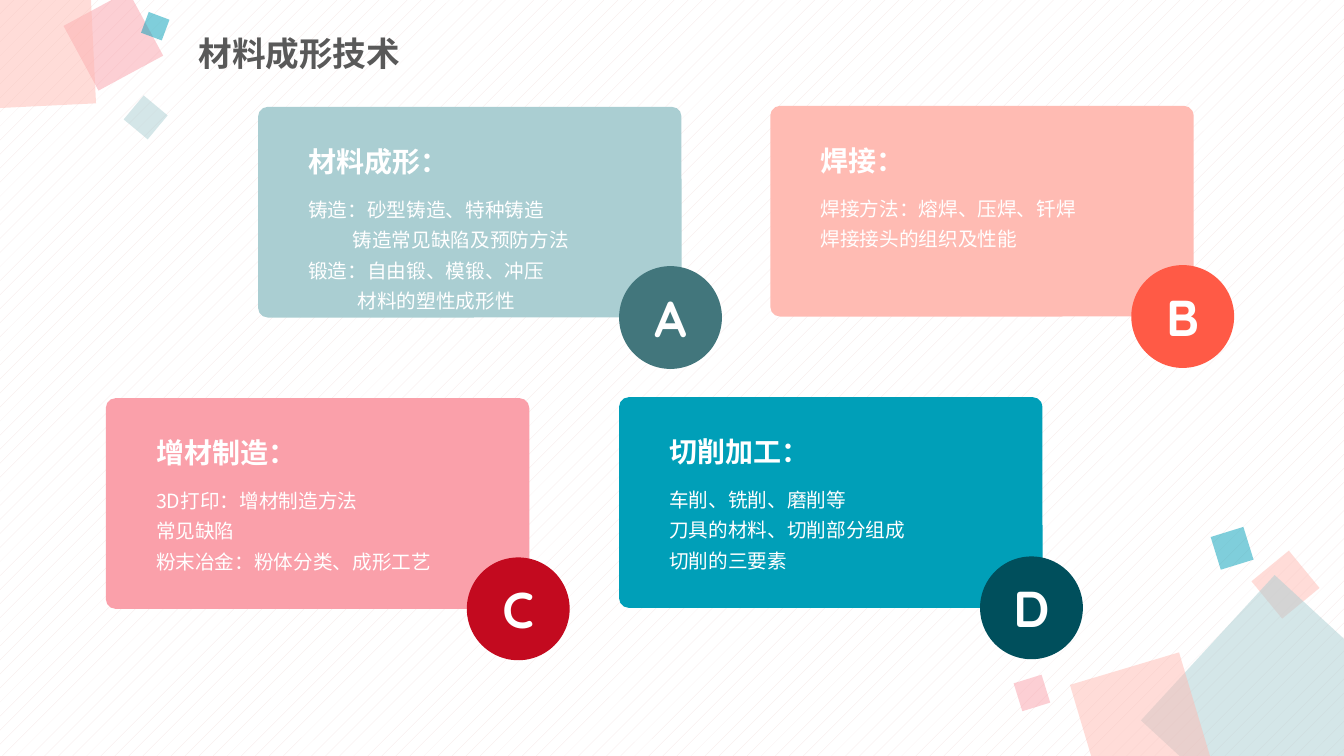
from dataclasses import dataclass

from lxml import etree
from pptx import Presentation
from pptx.dml.color import RGBColor
from pptx.enum.dml import MSO_PATTERN
from pptx.enum.shapes import MSO_SHAPE
from pptx.enum.text import MSO_ANCHOR, PP_ALIGN
from pptx.oxml.ns import qn
from pptx.util import Inches, Pt

RECT, ROUNDED, OVAL = MSO_SHAPE.RECTANGLE, MSO_SHAPE.ROUNDED_RECTANGLE, MSO_SHAPE.OVAL
MIDDLE, CENTER = MSO_ANCHOR.MIDDLE, PP_ALIGN.CENTER
PERCENT_5 = MSO_PATTERN.PERCENT_5

WHITE = RGBColor(0xFF, 0xFF, 0xFF)
BLUSH = RGBColor(0xF5, 0xE5, 0xE4)
GREY = RGBColor(0x59, 0x59, 0x59)
MIST = RGBColor(0xAA, 0xCE, 0xD2)
SLATE = RGBColor(0x42, 0x76, 0x7C)
PEACH = RGBColor(0xFF, 0xBB, 0xB3)
CORAL = RGBColor(0xFF, 0x5A, 0x46)
PINK = RGBColor(0xFA, 0xA0, 0xAA)
RED = RGBColor(0xC3, 0x0A, 0x1F)
TEAL = RGBColor(0x00, 0x9F, 0xB8)
PETROL = RGBColor(0x00, 0x4F, 0x5C)

CJK_FONT = "Noto Sans CJK SC"
LATIN_FONT = "Quicksand"
CARD_W, CARD_H, BADGE = 4.2, 2.09, 1.02


@dataclass
class Square:
    x: float
    y: float
    size: float
    rotation: float
    color: RGBColor


@dataclass
class Line:
    text: str
    indent: float = 0


@dataclass
class Card:
    letter: str
    x: float
    y: float
    color: RGBColor
    badge_color: RGBColor
    heading: str
    lines: list[Line]


SQUARES = [
    Square(12.51, 5.56, 0.48, 320.6, PEACH),
    Square(11.72, 6.11, 1.96, 42.6, MIST),
    Square(10.75, 6.61, 1.13, 343.4, PEACH),
    Square(10.09, 6.73, 0.29, 342.8, PINK),
    Square(12.05, 5.27, 0.34, 342.8, TEAL),
    Square(0.76, 0.04, 0.73, 331.6, PINK),
    Square(-0.46, -0.32, 1.38, 357.2, PEACH),
    Square(1.29, 1.01, 0.31, 309.8, MIST),
    Square(1.43, 0.15, 0.22, 290.5, TEAL),
]

CARDS = [
    Card("A", 2.56, 1.06, MIST, SLATE, "材料成形：", [
        Line("铸造：砂型铸造、特种铸造"), Line("铸造常见缺陷及预防方法", 0.44),
        Line("锻造：自由锻、模锻、冲压"), Line("材料的塑性成形性", 0.49)]),
    Card("B", 7.64, 1.05, PEACH, CORAL, "焊接：", [
        Line("焊接方法：熔焊、压焊、钎焊"), Line("焊接接头的组织及性能")]),
    Card("C", 1.05, 3.95, PINK, RED, "增材制造：", [
        Line("3D打印：增材制造方法"), Line("常见缺陷"),
        Line("粉末冶金：粉体分类、成形工艺")]),
    Card("D", 6.14, 3.94, TEAL, PETROL, "切削加工：", [
        Line("车削、铣削、磨削等"), Line("刀具的材料、切削部分组成"),
        Line("切削的三要素")]),
]


def add_filled(s, kind, x: float, y: float, w: float, h: float, color: RGBColor):
    sp = s.shapes.add_shape(kind, Inches(x), Inches(y), Inches(w), Inches(h))
    sp.shadow.inherit = False
    sp.fill.solid()
    sp.fill.fore_color.rgb = color
    sp.line.fill.background()
    return sp


def style(p, font: str, size: float, color: RGBColor, bold: bool = False) -> None:
    """Set the paragraph's font, with the CJK font for East Asian text."""
    p.font.name = font
    p.font.size = Pt(size)
    p.font.bold = bold
    p.font.color.rgb = color
    def_rpr = p._p.pPr.find(qn("a:defRPr"))
    etree.SubElement(def_rpr, qn("a:ea")).set("typeface", CJK_FONT)


def add_text(s, x: float, y: float, w: float, h: float, wrap: bool = True):
    tf = s.shapes.add_textbox(Inches(x), Inches(y), Inches(w), Inches(h)).text_frame
    tf.word_wrap = wrap
    return tf


def add_square(s, square: Square) -> None:
    """Draw a half-transparent rotated square."""
    sp = add_filled(s, RECT, square.x, square.y, square.size, square.size, square.color)
    sp.rotation = square.rotation
    rgb = sp._element.spPr.find(qn("a:solidFill")).find(qn("a:srgbClr"))
    etree.SubElement(rgb, qn("a:alpha")).set("val", "50000")


def add_title(s, text: str) -> None:
    tf = add_text(s, 1.87, 0.26, 6.13, 0.58)
    tf.vertical_anchor = MIDDLE
    p = tf.paragraphs[0]
    p.text = text
    p.line_spacing = 0.9
    style(p, CJK_FONT, 24, GREY, bold=True)


def add_card(s, card: Card) -> None:
    panel = add_filled(s, ROUNDED, card.x, card.y, CARD_W, CARD_H, card.color)
    panel.adjustments[0] = 0.046

    badge = add_filled(s, OVAL, card.x + 3.58, card.y + 1.58, BADGE, BADGE,
                       card.badge_color)
    badge.text_frame.vertical_anchor = MIDDLE
    p = badge.text_frame.paragraphs[0]
    p.text = card.letter
    p.alignment = CENTER
    style(p, LATIN_FONT, 36, WHITE, bold=True)

    tf = add_text(s, card.x + 0.4, card.y + 0.78, 3.47, 0.06 + 0.31 * len(card.lines))
    for i, line in enumerate(card.lines):
        p = tf.add_paragraph() if i else tf.paragraphs[0]
        p.text = line.text
        p.line_spacing = 1.3
        if line.indent:
            p._p.get_or_add_pPr().set("marL", str(Inches(line.indent)))
        style(p, CJK_FONT, 14, WHITE)

    tf = add_text(s, card.x + 0.4, card.y + 0.22, 0.2 + 0.28 * len(card.heading), 0.49,
                  wrap=False)
    p = tf.paragraphs[0]
    p.text = card.heading
    p.line_spacing = 1.3
    style(p, LATIN_FONT, 20, WHITE, bold=True)


def main() -> None:
    prs = Presentation()
    prs.slide_width, prs.slide_height = Inches(13.33), Inches(7.5)
    s = prs.slides.add_slide(prs.slide_layouts[6])
    fill = s.background.fill
    fill.patterned()
    fill.pattern = PERCENT_5
    fill.fore_color.rgb = BLUSH
    fill.back_color.rgb = WHITE
    for square in SQUARES:
        add_square(s, square)
    add_title(s, "材料成形技术")
    for card in CARDS:
        add_card(s, card)
    prs.save("out.pptx")


if __name__ == "__main__":
    main()
